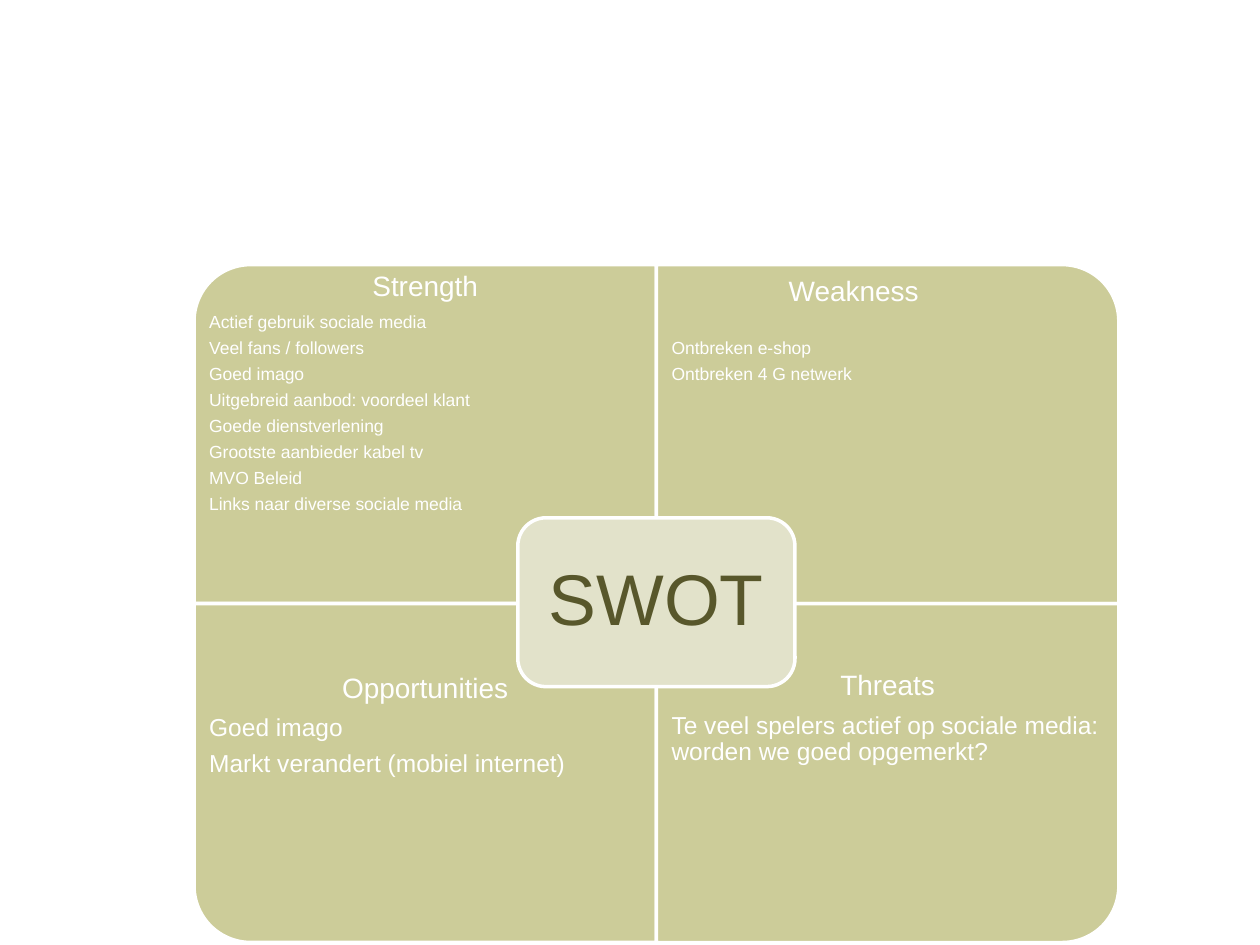
"""Build a SWOT matrix slide with four panels and a centre label."""
import pptx
import pptx.util
import pptx.dml.color
import pptx.enum.shapes
import pptx.enum.text

Inches = pptx.util.Inches
Pt = pptx.util.Pt
RGB = pptx.dml.color.RGBColor
SHAPE = pptx.enum.shapes.MSO_SHAPE
ALIGN = pptx.enum.text.PP_ALIGN
ANCHOR = pptx.enum.text.MSO_ANCHOR

WHITE = RGB(0xFF, 0xFF, 0xFF)
OLIVE = RGB(0xCC, 0xCC, 0x99)
PALE = RGB(0xE2, 0xE2, 0xCA)
DARK = RGB(0x58, 0x57, 0x2B)

LEFT, TOP, WIDE, HIGH = 1.54, 2.1, 3.67, 2.69
PAD = 0.12


class Deck:
    def __init__(self, font):
        self.font = font
        self.prs = pptx.Presentation()
        self.prs.slide_width = Inches(10)
        self.prs.slide_height = Inches(7.5)
        self.slide = self.prs.slides.add_slide(self.prs.slide_layouts[6])

    def panel(self, kind, x, y, w, h, fill, turn=0):
        if turn % 180:
            x, y, w, h = x + (w - h) / 2, y + (h - w) / 2, h, w
        shape = self.slide.shapes.add_shape(
            kind, Inches(x), Inches(y), Inches(w), Inches(h))
        shape.rotation = turn
        shape.shadow.inherit = False
        shape.fill.solid()
        shape.fill.fore_color.rgb = fill
        shape.line.color.rgb = WHITE
        shape.line.width = Pt(2)
        return shape

    def line(self, para, text, size, color, align, after):
        para.alignment = align
        para.line_spacing = 0.9
        para.space_before = Pt(0)
        para.space_after = Pt(after)
        run = para.add_run()
        run.text = text
        run.font.name = self.font
        run.font.size = Pt(size)
        run.font.color.rgb = color

    def block(self, x, y, inset, right, head, gap, items, size):
        box = self.slide.shapes.add_textbox(
            Inches(x), Inches(y), Inches(WIDE), Inches(2.01))
        frame = box.text_frame
        frame.word_wrap = True
        frame.vertical_anchor = ANCHOR.TOP
        frame.margin_left = Inches(PAD)
        frame.margin_right = Inches(right)
        frame.margin_top = Inches(inset)
        frame.margin_bottom = Inches(0)
        self.line(frame.paragraphs[0], head, 16, WHITE, ALIGN.CENTER, gap)
        for item in items:
            self.line(frame.add_paragraph(), item, size, WHITE,
                      ALIGN.LEFT, size * 0.4)

    def label(self, shape, text, size, color):
        frame = shape.text_frame
        frame.vertical_anchor = ANCHOR.MIDDLE
        self.line(frame.paragraphs[0], text, size, color, ALIGN.CENTER, 0)


PARTS = [
    (0, 0, 270, 2.1, 0.06, PAD, "Strength", 6.4, 10, [
        "Actief gebruik sociale media",
        "Veel fans / followers",
        "Goed imago",
        "Uitgebreid aanbod: voordeel klant",
        "Goede dienstverlening",
        "Grootste aanbieder kabel tv",
        "MVO Beleid",
        "Links naar diverse sociale media"]),
    (1, 0, 0, 2.1, 0.1, 0.66, "Weakness", 18.4, 10, [
        "Ontbreken e-shop",
        "Ontbreken 4 G netwerk"]),
    (0, 1, 180, 5.3, 0.05, PAD, "Opportunities", 6.4, 14, [
        "Goed imago",
        "Markt verandert (mobiel internet)"]),
    (1, 1, 90, 5.3, 0.03, PAD, "Threats", 6.4, 14, [
        "Te veel spelers actief op sociale media: "
        "worden we goed opgemerkt?"]),
]


def main():
    deck = Deck("Arial")
    for col, row, turn, top, inset, right, head, gap, size, items in PARTS:
        x = LEFT + col * WIDE
        deck.panel(SHAPE.ROUND_1_RECTANGLE, x, TOP + row * HIGH,
                   WIDE, HIGH, OLIVE, turn)
        deck.block(x, top, inset, right, head, gap, items, size)
    core = deck.panel(SHAPE.ROUNDED_RECTANGLE, 4.11, 4.11, 2.2, 1.34, PALE)
    deck.label(core, "SWOT", 41, DARK)
    deck.prs.save("out.pptx")


if __name__ == "__main__":
    main()
